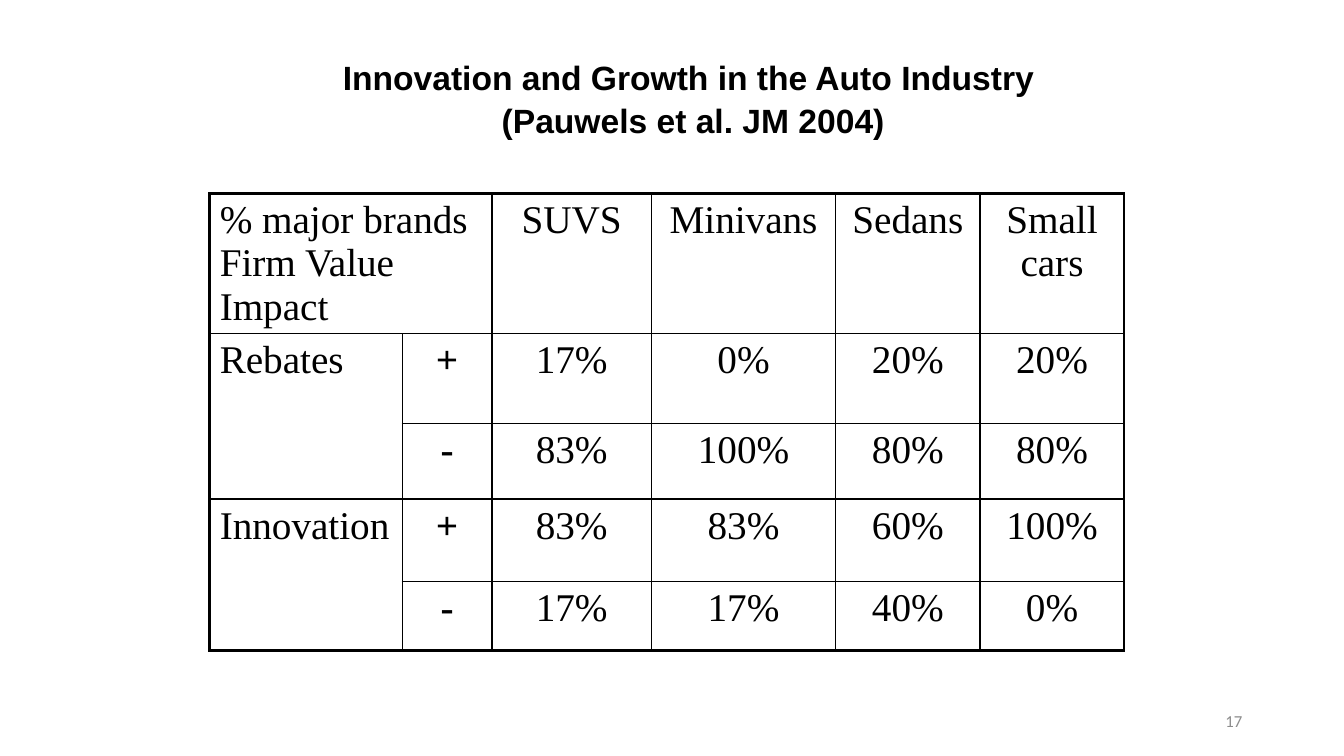
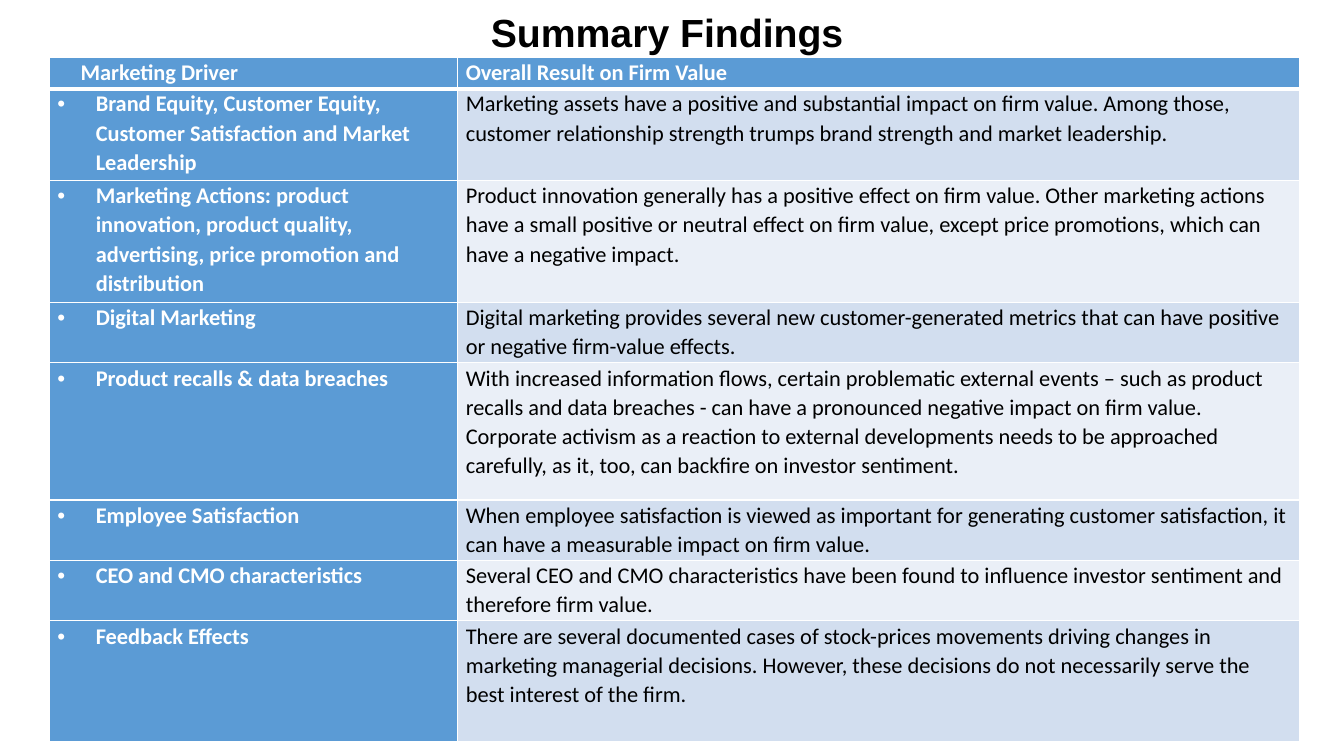
from dataclasses import dataclass

from lxml.etree import SubElement
from pptx import Presentation
from pptx.dml.color import RGBColor
from pptx.enum.text import MSO_ANCHOR, MSO_AUTO_SIZE, PP_ALIGN
from pptx.oxml.ns import qn
from pptx.slide import Slide
from pptx.table import Table, _Cell
from pptx.text.text import TextFrame, _Paragraph
from pptx.util import Inches, Pt

BLACK = RGBColor(0x00, 0x00, 0x00)
WHITE = RGBColor(0xFF, 0xFF, 0xFF)
GRAY = RGBColor(0x8C, 0x8C, 0x8C)
BLUE = RGBColor(0x5B, 0x9B, 0xD5)
BAND_DARK = RGBColor(0xD2, 0xDE, 0xEF)
BAND_LIGHT = RGBColor(0xEA, 0xEF, 0xF7)

TITLE_FONT = "Arial"
BODY_FONT = "Calibri"
TABLE_FONT = "Times New Roman"
LINE_SPACING = 1.07
THIN, THICK, HEADER_RULE = 1, 2.25, 3


@dataclass(frozen=True)
class Box:
    left: float
    top: float
    width: float
    height: float


@dataclass(frozen=True)
class Finding:
    driver: str
    result: str
    height: float


@dataclass(frozen=True)
class Borders:
    left: float = THIN
    right: float = THIN
    top: float = THIN
    bottom: float = THIN


IMPACT_COLUMNS = [1.91, 0.89, 1.58, 1.83, 1.43, 1.43]
IMPACT_HEIGHTS = [1.36, 0.89, 0.75, 0.82, 0.68]
IMPACT_ROWS = [
    ["% major brands Firm Value Impact", "", "SUVS", "Minivans", "Sedans", "Small cars"],
    ["Rebates", "+", "17%", "0%", "20%", "20%"],
    ["", "-", "83%", "100%", "80%", "80%"],
    ["Innovation", "+", "83%", "83%", "60%", "100%"],
    ["", "-", "17%", "17%", "40%", "0%"],
]
IMPACT_MERGES = [((0, 0), (0, 1)), ((1, 0), (2, 0)), ((3, 0), (4, 0))]

FINDINGS = [
    Finding("Marketing Driver", "Overall Result on Firm Value", 0.31),
    Finding(
        "Brand Equity, Customer Equity, Customer Satisfaction and Market Leadership",
        "Marketing assets have a positive and substantial impact on firm value. Among those, "
        "customer relationship strength trumps brand strength and market leadership.",
        0.91,
    ),
    Finding(
        "Marketing Actions: product innovation, product quality, advertising, price promotion "
        "and distribution",
        "Product innovation generally has a positive effect on firm value. Other marketing actions "
        "have a small positive or neutral effect on firm value, except price promotions, which can "
        "have a negative impact.",
        1.21,
    ),
    Finding(
        "Digital Marketing",
        "Digital marketing provides several new customer-generated metrics that can have positive "
        "or negative firm-value effects.",
        0.6,
    ),
    Finding(
        "Product recalls & data breaches",
        "With increased information flows, certain problematic external events – such as product "
        "recalls and data breaches - can have a pronounced negative impact on firm value. "
        "Corporate activism as a reaction to external developments needs to be approached "
        "carefully, as it, too, can backfire on investor sentiment.",
        1.36,
    ),
    Finding(
        "Employee Satisfaction",
        "When employee satisfaction is viewed as important for generating customer satisfaction, "
        "it can have a measurable impact on firm value.",
        0.6,
    ),
    Finding(
        "CEO and CMO characteristics",
        "Several CEO and CMO characteristics have been found to influence investor sentiment and "
        "therefore firm value.",
        0.6,
    ),
    Finding(
        "Feedback Effects",
        "There are several documented cases of stock-prices movements driving changes in "
        "marketing managerial decisions. However, these decisions do not necessarily serve the "
        "best interest of the firm.",
        1.2,
    ),
]


def indent_paragraph(paragraph: _Paragraph, margin: float, bullet: bool) -> None:
    properties = paragraph._p.get_or_add_pPr()
    properties.set("marL", str(Inches(margin)))
    properties.set("indent", str(Inches(-margin if bullet else 0)))
    if bullet:
        SubElement(properties, qn("a:buFont"), typeface="Arial")
        SubElement(properties, qn("a:buChar"), char="•")


def write_text(
    text_frame: TextFrame,
    text: str,
    *,
    font: str,
    size: float,
    color: RGBColor = BLACK,
    bold: bool = False,
    align: PP_ALIGN = PP_ALIGN.LEFT,
    line_spacing: float = 1.0,
    before: float = 0,
    after: float = 0,
    margin: float = 0,
    bullet: bool = False,
) -> None:
    text_frame.word_wrap = True
    text_frame.text = text
    for paragraph in text_frame.paragraphs:
        paragraph.alignment = align
        paragraph.line_spacing = line_spacing
        paragraph.space_before = Pt(before)
        paragraph.space_after = Pt(after)
        if margin:
            indent_paragraph(paragraph, margin, bullet)
        for run in paragraph.runs:
            run.font.name = font
            run.font.size = Pt(size)
            run.font.bold = bold
            run.font.color.rgb = color


def set_borders(cell: _Cell, borders: Borders, color: RGBColor) -> None:
    properties = cell._tc.get_or_add_tcPr()
    sides = {"L": borders.left, "R": borders.right, "T": borders.top, "B": borders.bottom}
    for side, width in sides.items():
        line = SubElement(properties, qn(f"a:ln{side}"), w=str(Pt(width)))
        fill = SubElement(line, qn("a:solidFill"))
        SubElement(fill, qn("a:srgbClr"), val=str(color))


def add_title_slide(
    presentation: Presentation, title: str, box: Box, size: float, anchor: MSO_ANCHOR
) -> Slide:
    slide = presentation.slides.add_slide(presentation.slide_layouts[5])
    shape = slide.shapes.title
    shape.left, shape.top = Inches(box.left), Inches(box.top)
    shape.width, shape.height = Inches(box.width), Inches(box.height)
    shape.text_frame.auto_size = MSO_AUTO_SIZE.NONE
    shape.text_frame.vertical_anchor = anchor
    write_text(
        shape.text_frame, title, font=TITLE_FONT, size=size, bold=True,
        align=PP_ALIGN.CENTER, line_spacing=LINE_SPACING,
    )
    return slide


def add_plain_table(
    slide: Slide, left: float, top: float, columns: list[float], heights: list[float]
) -> Table:
    table = slide.shapes.add_table(
        len(heights), len(columns), Inches(left), Inches(top),
        Inches(sum(columns)), Inches(sum(heights)),
    ).table
    table.first_row = False
    table.horz_banding = False
    for column, width in zip(table.columns, columns):
        column.width = Inches(width)
    for row, height in zip(table.rows, heights):
        row.height = Inches(height)
    return table


def add_page_number(slide: Slide, number: str) -> None:
    shape = slide.shapes.add_textbox(Inches(9.42), Inches(6.95), Inches(3), Inches(0.4))
    shape.text_frame.vertical_anchor = MSO_ANCHOR.MIDDLE
    write_text(
        shape.text_frame, number, font=BODY_FONT, size=12, color=GRAY, align=PP_ALIGN.RIGHT
    )


def build_impact_slide(presentation: Presentation) -> None:
    slide = add_title_slide(
        presentation,
        "Innovation and Growth in the Auto Industry \n(Pauwels et al. JM 2004)",
        Box(1.19, 0, 11.37, 1.92), 24, MSO_ANCHOR.MIDDLE,
    )
    table = add_plain_table(slide, 2.08, 1.92, IMPACT_COLUMNS, IMPACT_HEIGHTS)
    for first, last in IMPACT_MERGES:
        table.cell(*first).merge(table.cell(*last))
    for row, texts in enumerate(IMPACT_ROWS):
        for column, text in enumerate(texts):
            cell = table.cell(row, column)
            at_right = column + cell.span_width == len(IMPACT_COLUMNS)
            at_bottom = row + cell.span_height == len(IMPACT_ROWS)
            borders = Borders(
                left=THIN if column else THICK,
                right=THICK if at_right else THIN,
                top=THIN if row else THICK,
                bottom=THICK if at_bottom else THIN,
            )
            set_borders(cell, borders, BLACK)
            cell.fill.background()
            if text:
                write_text(
                    cell.text_frame, text, font=TABLE_FONT, size=28, bold=text in "+-",
                    align=PP_ALIGN.CENTER if column else PP_ALIGN.LEFT, before=5.6,
                )
    add_page_number(slide, "17")


def build_findings_slide(presentation: Presentation) -> None:
    slide = add_title_slide(
        presentation, "Summary Findings ", Box(2.28, 0, 8.78, 0.57), 28, MSO_ANCHOR.TOP
    )
    heights = [finding.height for finding in FINDINGS]
    table = add_plain_table(slide, 0.49, 0.57, [4.05, 8.35], heights)
    for row, finding in enumerate(FINDINGS):
        header = row == 0
        band = BAND_DARK if row % 2 else BAND_LIGHT
        borders = Borders(
            top=HEADER_RULE if row == 1 else THIN,
            bottom=HEADER_RULE if header else THIN,
        )
        for column, text in enumerate((finding.driver, finding.result)):
            cell = table.cell(row, column)
            is_driver = column == 0
            strong = header or is_driver
            cell.margin_left = cell.margin_right = Inches(0.08)
            cell.margin_top = cell.margin_bottom = 0
            set_borders(cell, borders, WHITE)
            cell.fill.solid()
            cell.fill.fore_color.rgb = BLUE if strong else band
            driver_margin = 0.23 if header else 0.38
            write_text(
                cell.text_frame, text, font=BODY_FONT, size=16,
                color=WHITE if strong else BLACK, bold=strong,
                line_spacing=LINE_SPACING, before=6, after=6 if header else 12,
                margin=driver_margin if is_driver else 0,
                bullet=is_driver and not header,
            )


def main() -> None:
    presentation = Presentation()
    presentation.slide_width = Inches(13.33)
    presentation.slide_height = Inches(7.5)
    build_impact_slide(presentation)
    build_findings_slide(presentation)
    presentation.save("out.pptx")


if __name__ == "__main__":
    main()
